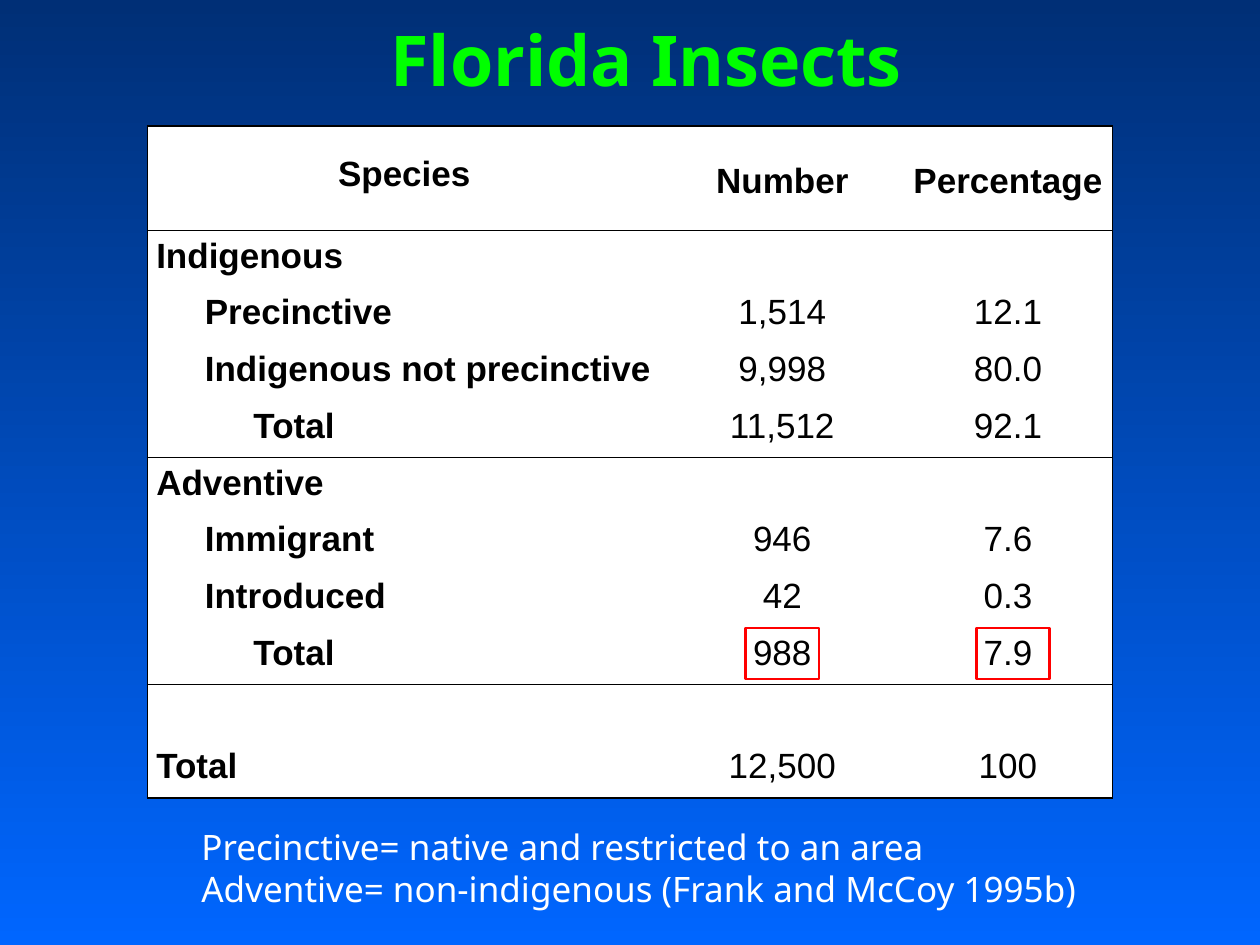
"""Build the Florida Insects slide: a species table with highlighted totals and definitions."""
from dataclasses import dataclass
from typing import Any

from lxml.etree import SubElement
from pptx import Presentation
from pptx.dml.color import RGBColor
from pptx.enum.text import MSO_ANCHOR, MSO_AUTO_SIZE, PP_ALIGN
from pptx.oxml.ns import qn
from pptx.util import Cm, Pt


@dataclass(frozen=True)
class Theme:
    sky_top: str = "002F76"
    sky_bottom: str = "0066FF"
    title: str = "00FF00"
    note: str = "FFFFFF"
    ink: str = "000000"
    paper: str = "FFFFFF"
    highlight: str = "FF0000"
    heading_font: str = "Noto Sans"
    table_font: str = "Arial"
    title_size: float = 40
    body_size: float = 20
    rule_width: float = 1
    highlight_width: float = 1.5


@dataclass(frozen=True)
class Row:
    label: str = ""
    number: str = ""
    percentage: str = ""
    level: int = 0
    starts_section: bool = False
    ends_section: bool = False


@dataclass(frozen=True)
class Box:
    left: float
    top: float
    width: float
    height: float

    def lengths(self) -> tuple:
        return Cm(self.left), Cm(self.top), Cm(self.width), Cm(self.height)


THEME = Theme()
ROWS = [
    Row("Species", "Number", "Percentage", starts_section=True, ends_section=True),
    Row("Indigenous", starts_section=True),
    Row("Precinctive", "1,514", "12.1", 1),
    Row("Indigenous not precinctive", "9,998", "80.0", 1),
    Row("Total", "11,512", "92.1", 2, ends_section=True),
    Row("Adventive", starts_section=True),
    Row("Immigrant", "946", "7.6", 1),
    Row("Introduced", "42", "0.3", 1),
    Row("Total", "988", "7.9", 2, ends_section=True),
    Row(starts_section=True),
    Row("Total", "12,500", "100", ends_section=True),
]
DEFINITIONS = [
    "Precinctive= native and restricted to an area",
    "Adventive= non-indigenous (Frank and McCoy 1995b)",
]
TITLE_BOX = Box(7.62, 0.2, 12.5, 1.96)
TABLE_BOX = Box(2.97, 2.54, 19.46, 13.55)
DEFINITIONS_BOX = Box(3.81, 16.51, 20.45, 1.96)
HIGHLIGHTS = [Box(15.03, 12.66, 1.48, 1.03), Box(19.68, 12.66, 1.48, 1.03)]
COLUMN_WIDTHS = [10.36, 4.88, 4.22]
HEADER_HEIGHT = 2.11
SIDE_INSET = 0.18
LEVEL_INDENT = 0.98
SPECIES_DROP = 0.46


def apply_format(target: Any, values: dict[str, Any]) -> None:
    for attribute, value in values.items():
        setattr(target, attribute, value)


def format_font(font: Any, face: str, size: float, color: str, bold: bool) -> None:
    apply_format(font, {"name": face, "size": Pt(size), "bold": bold})
    font.color.rgb = RGBColor.from_string(color)


def paint_background(slide: Any) -> None:
    fill = slide.background.fill
    fill.gradient()
    fill.gradient_angle = 270
    for stop, color in zip(fill.gradient_stops, (THEME.sky_top, THEME.sky_bottom)):
        stop.color.rgb = RGBColor.from_string(color)


def write_title(slide: Any) -> None:
    title = slide.shapes.title
    apply_format(title, dict(zip(("left", "top", "width", "height"), TITLE_BOX.lengths())))
    apply_format(title.text_frame, {
        "text": "Florida Insects", "word_wrap": True,
        "auto_size": MSO_AUTO_SIZE.NONE, "vertical_anchor": MSO_ANCHOR.TOP,
    })
    heading = title.text_frame.paragraphs[0]
    heading.alignment = PP_ALIGN.LEFT
    format_font(heading.runs[0].font, THEME.heading_font, THEME.title_size, THEME.title, True)


def rule_cell(cell: Any, ruled_sides: dict[str, bool]) -> None:
    properties = cell._tc.get_or_add_tcPr()
    for side, ruled in ruled_sides.items():
        line = SubElement(properties, qn(f"a:ln{side}"), w=str(Pt(THEME.rule_width)))
        if ruled:
            SubElement(SubElement(line, qn("a:solidFill")), qn("a:srgbClr"), val=THEME.ink)
        else:
            SubElement(line, qn("a:noFill"))


def fill_cell(cell: Any, row: Row, column: int, is_header: bool) -> None:
    is_label = column == 0
    rule_cell(cell, {
        "L": is_label, "R": column == len(COLUMN_WIDTHS) - 1,
        "T": row.starts_section, "B": row.ends_section,
    })
    cell.fill.solid()
    cell.fill.fore_color.rgb = RGBColor.from_string(THEME.paper)
    apply_format(cell, {
        "margin_left": Cm(SIDE_INSET + (LEVEL_INDENT * row.level if is_label else 0)),
        "margin_right": Cm(SIDE_INSET),
        "margin_top": Cm(SPECIES_DROP if is_header and is_label else 0),
        "margin_bottom": Cm(0),
        "vertical_anchor": MSO_ANCHOR.MIDDLE if is_header and not is_label else MSO_ANCHOR.TOP,
    })
    entry = cell.text_frame.paragraphs[0]
    apply_format(entry, {
        "text": (row.label, row.number, row.percentage)[column],
        "alignment": PP_ALIGN.LEFT if is_label and not is_header else PP_ALIGN.CENTER,
        "line_spacing": 1.15,
    })
    format_font(entry.font, THEME.table_font, THEME.body_size, THEME.ink, is_header or is_label)
    for run in entry.runs:
        format_font(run.font, THEME.table_font, THEME.body_size, THEME.ink, is_header or is_label)


def draw_species_table(slide: Any) -> None:
    species = slide.shapes.add_table(len(ROWS), len(COLUMN_WIDTHS), *TABLE_BOX.lengths()).table
    apply_format(species, {"first_row": False, "horz_banding": False})
    for column, width in zip(species.columns, COLUMN_WIDTHS):
        column.width = Cm(width)
    row_height = (TABLE_BOX.height - HEADER_HEIGHT) / (len(ROWS) - 1)
    for index, row in enumerate(ROWS):
        species.rows[index].height = Cm(row_height if index else HEADER_HEIGHT)
        for column in range(len(COLUMN_WIDTHS)):
            fill_cell(species.cell(index, column), row, column, index == 0)


def write_definitions(slide: Any) -> None:
    frame = slide.shapes.add_textbox(*DEFINITIONS_BOX.lengths()).text_frame
    apply_format(frame, {"word_wrap": True, "text": "\n".join(DEFINITIONS)})
    for definition in frame.paragraphs:
        format_font(definition.runs[0].font, THEME.heading_font, THEME.body_size, THEME.note, False)


def draw_highlight(slide: Any, box: Box) -> None:
    highlight = slide.shapes.add_shape(1, *box.lengths())
    highlight.shadow.inherit = False
    highlight.fill.background()
    highlight.line.color.rgb = RGBColor.from_string(THEME.highlight)
    highlight.line.width = Pt(THEME.highlight_width)


def main() -> None:
    presentation = Presentation()
    apply_format(presentation, {"slide_width": Cm(25.4), "slide_height": Cm(19.05)})
    slide = presentation.slides.add_slide(presentation.slide_layouts.get_by_name("Title Only"))
    paint_background(slide)
    write_title(slide)
    draw_species_table(slide)
    write_definitions(slide)
    for box in HIGHLIGHTS:
        draw_highlight(slide, box)
    presentation.save("out.pptx")


if __name__ == "__main__":
    main()
